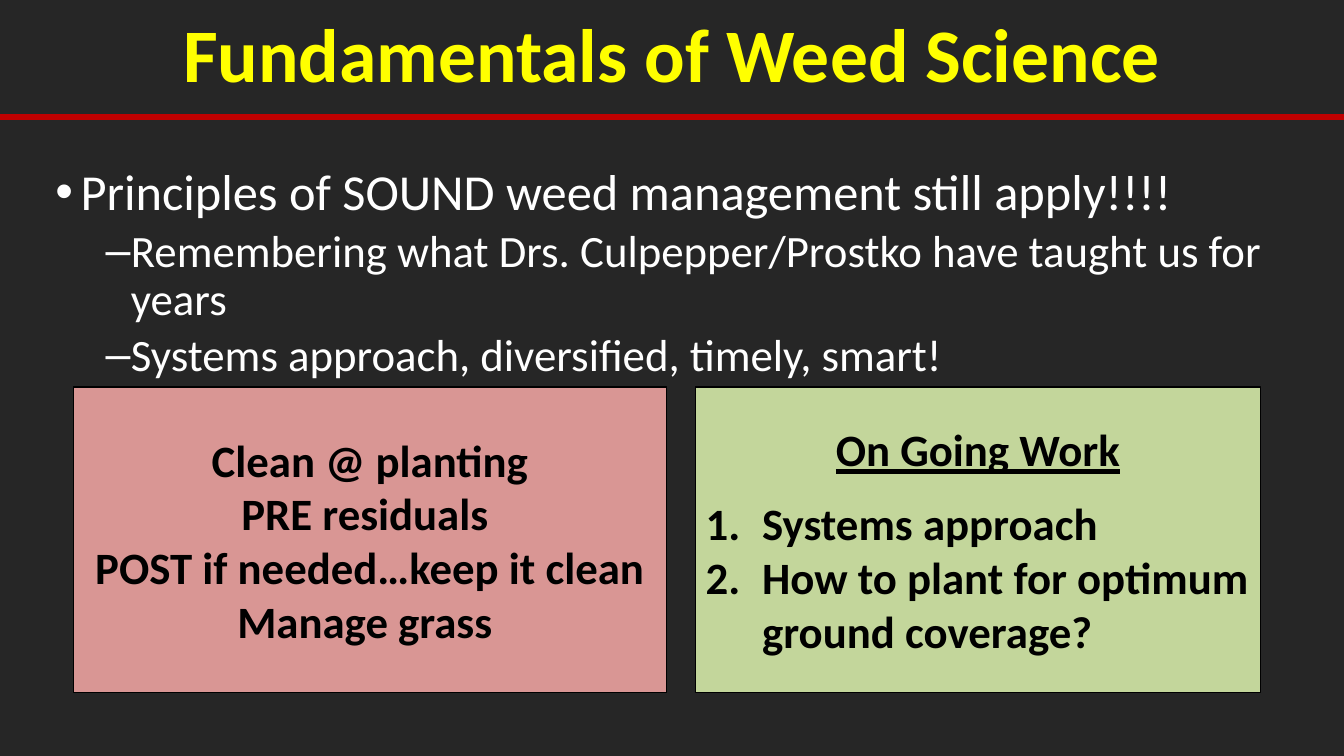
"""Build the weed science fundamentals slide."""
from lxml import etree
from pptx import Presentation
from pptx import util as u
from pptx.dml.color import RGBColor
from pptx.enum import shapes, text
from pptx.oxml import ns

DARK = RGBColor(0x26, 0x26, 0x26)
WHITE = RGBColor(0xFF, 0xFF, 0xFF)
BLACK = RGBColor(0, 0, 0)
YELLOW = RGBColor(0xFF, 0xFF, 0)
RED = RGBColor(0xC0, 0, 0)
PINK = RGBColor(0xD9, 0x96, 0x94)
GREEN = RGBColor(0xC3, 0xD6, 0x9B)
FONT = "Calibri"
WIDTH = 13.33
HEADER_HEIGHT = 1.16
CARD_TOP, CARD_HEIGHT = 3.84, 3.03


def inches(*lengths):
    """Convert several lengths to Inches."""
    return [u.Inches(length) for length in lengths]


def style(para, size, color, bold=False):
    """Format the runs of a paragraph."""
    for span in para.runs:
        span.font.name = FONT
        span.font.size = u.Pt(size)
        span.font.bold = bold
        span.font.color.rgb = color


def add_bullet(para, margin, hang, tag, **attributes):
    """Give a paragraph a hanging bullet or number."""
    properties = para._p.get_or_add_pPr()
    properties.set("marL", str(u.Inches(margin)))
    properties.set("indent", str(-u.Inches(hang)))
    if tag == "a:buChar":
        etree.SubElement(properties, ns.qn("a:buFont"), typeface="Arial")
    etree.SubElement(properties, ns.qn(tag), **attributes)


def add_header(page, width, height):
    """Place the title band and the rule under it."""
    title = page.shapes.title
    title.left, title.top, title.width, title.height = inches(0, 0, width, height)
    frame = title.text_frame
    frame.text = "Fundamentals of Weed Science"
    frame.auto_size = text.MSO_AUTO_SIZE.NONE
    frame.vertical_anchor = text.MSO_ANCHOR.MIDDLE
    para = frame.paragraphs[0]
    para.alignment = text.PP_ALIGN.CENTER
    para.line_spacing = 0.9
    style(para, 54, YELLOW, True)
    rule = page.shapes.add_connector(
        shapes.MSO_CONNECTOR.STRAIGHT, *inches(0, height, width, height))
    rule.line.color.rgb = RED
    rule.line.width = u.Pt(4.5)
    etree.SubElement(rule._element.spPr, ns.qn("a:effectLst"))


def add_principles(page, left, top, width, height):
    """Place the bulleted principles."""
    box = page.shapes.add_textbox(*inches(left, top, width, height))
    frame = box.text_frame
    frame.word_wrap = True
    lines = [
        (0, "Principles of SOUND weed management still apply!!!!"),
        (1, "Remembering what Drs. Culpepper/Prostko have taught us for years"),
        (1, "Systems approach, diversified, timely, smart!"),
    ]
    frame.text = "\n".join(line for _, line in lines)
    for para, (level, _) in zip(frame.paragraphs, lines):
        para.level = level
        para.line_spacing = 0.9
        para.space_before = u.Pt(5 * level)
        add_bullet(para, 0.25 + 0.5 * level, 0.25, "a:buChar", char="•–"[level])
        style(para, 36 - 4 * level, WHITE)


def add_card(page, left, top, width, height, fill, lines):
    """Place a filled card of centred bold lines and return its paragraphs."""
    card = page.shapes.add_shape(
        shapes.MSO_SHAPE.RECTANGLE, *inches(left, top, width, height))
    card.shadow.inherit = False
    card.fill.solid()
    card.fill.fore_color.rgb = fill
    card.line.color.rgb = BLACK
    card.line.width = u.Pt(1)
    frame = card.text_frame
    frame.word_wrap = True
    frame.vertical_anchor = text.MSO_ANCHOR.MIDDLE
    frame.text = "\n".join(lines)
    for para in frame.paragraphs:
        para.alignment = text.PP_ALIGN.CENTER
        style(para, 32, BLACK, True)
    return frame.paragraphs


def add_ongoing_work(page, left, top, width, height):
    """Place the card with an underlined heading and a numbered list."""
    heading, *items = add_card(page, left, top, width, height, GREEN, [
        "On Going Work",
        "Systems approach",
        "How to plant for optimum ground coverage?",
    ])
    heading.runs[0].font.underline = True
    heading.space_after = u.Pt(14.5)
    for item in items:
        item.alignment = text.PP_ALIGN.LEFT
        add_bullet(item, 0.56, 0.56, "a:buAutoNum", type="arabicPeriod")


def main():
    """Build and save the deck."""
    deck = Presentation()
    deck.slide_width, deck.slide_height = inches(WIDTH, 7.5)
    page = deck.slides.add_slide(deck.slide_layouts[5])
    page.background.fill.solid()
    page.background.fill.fore_color.rgb = DARK
    add_header(page, WIDTH, HEADER_HEIGHT)
    add_principles(page, 0.45, 1.61, 12.48, 5.61)
    add_card(page, 0.73, CARD_TOP, 5.88, CARD_HEIGHT, PINK, [
        "Clean @ planting",
        "PRE residuals ",
        "POST if needed…keep it clean",
        "Manage grass ",
    ])
    add_ongoing_work(page, 6.9, CARD_TOP, 5.6, CARD_HEIGHT)
    deck.save("out.pptx")


if __name__ == "__main__":
    main()
